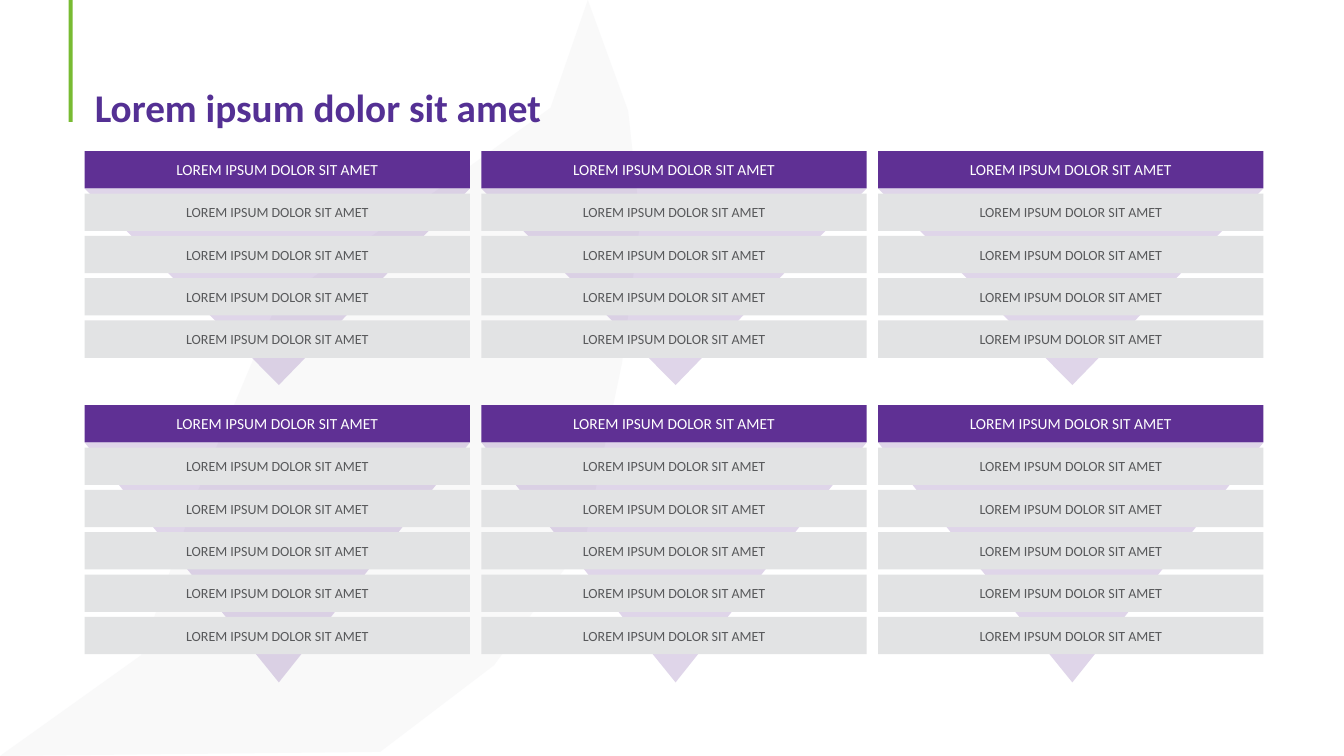
import pptx
import pptx.dml.color
import pptx.enum.shapes
import pptx.enum.text
import pptx.oxml.ns
import pptx.util
from lxml import etree

Inches = pptx.util.Inches
SHAPES = pptx.enum.shapes.MSO_SHAPE
ALIGN = pptx.enum.text.PP_ALIGN
ANCHOR = pptx.enum.text.MSO_ANCHOR

COLORS = {
    "white": "FFFFFF",
    "green": "78BB32",
    "title": "543094",
    "purple": "5F3094",
    "row": "E2E3E4",
    "text": "58595B",
    "backdrop": "E1E2E4",
}
LABEL = "LOREM IPSUM DOLOR SIT AMET"
COLUMN_LEFT = 0.84
COLUMN_PITCH = (8.71 - COLUMN_LEFT) / 2
COLUMN_WIDTH = 3.82
ROW_PITCH = 0.42
ROW_HEIGHT = 0.37
BANDS = [
    {"top": 1.5, "row_count": 4, "arrow_height": 1.95},
    {"top": 4.02, "row_count": 5, "arrow_height": 2.38},
]
BACKDROP_POINTS = [
    (0, 7.5), (1.4, 6.5), (1.95, 4.9), (2.75, 3), (4.3, 1.91), (5.46, 1.07), (5.83, 0),
    (6.23, 1.1), (6.35, 2.2), (6.17, 3.6), (5.8, 5.37), (4.9, 6.6), (3.77, 7.46),
]


def rgb(name):
    return pptx.dml.color.RGBColor.from_string(COLORS[name])


def write_text(shape, text, size, color, bold=False, align=ALIGN.CENTER,
               anchor=ANCHOR.MIDDLE, line_spacing=1.0):
    frame = shape.text_frame
    frame.word_wrap = True
    frame.auto_size = pptx.enum.text.MSO_AUTO_SIZE.NONE
    frame.vertical_anchor = anchor
    paragraph = frame.paragraphs[0]
    paragraph.alignment = align
    paragraph.line_spacing = line_spacing
    run = paragraph.add_run()
    run.text = text
    run.font.name = "Calibri"
    run.font.size = pptx.util.Pt(size)
    run.font.bold = bold
    run.font.color.rgb = rgb(color)


class SlideBuilder:
    def __init__(self, slide):
        self.slide = slide

    def paint(self, shape, color, opacity=None):
        shape.shadow.inherit = False
        shape.line.fill.background()
        shape.fill.solid()
        shape.fill.fore_color.rgb = rgb(color)
        if opacity is not None:
            qualified = pptx.oxml.ns.qn
            color_element = shape.element.spPr.find(".//" + qualified("a:srgbClr"))
            alpha = etree.SubElement(color_element, qualified("a:alpha"))
            alpha.set("val", str(opacity * 1000))

    def preset(self, kind, left, top, width, height, color, opacity=None):
        shape = self.slide.shapes.add_shape(
            kind, Inches(left), Inches(top), Inches(width), Inches(height))
        self.paint(shape, color, opacity)
        return shape

    def backdrop(self):
        points = [(Inches(x), Inches(y)) for x, y in BACKDROP_POINTS]
        builder = self.slide.shapes.build_freeform(*points[0])
        builder.add_line_segments(points[1:])
        self.paint(builder.convert_to_shape(), "backdrop", 20)

    def title(self, text):
        title = self.slide.shapes.title
        title.left, title.top = Inches(0.84), Inches(0.41)
        title.width, title.height = Inches(11.98), Inches(0.94)
        write_text(title, text, size=28, color="title", bold=True,
                   align=ALIGN.LEFT, anchor=ANCHOR.BOTTOM, line_spacing=0.9)
        title.element.getparent().append(title.element)

    def arrow(self, left, top, height):
        arrow = self.preset(SHAPES.ISOSCELES_TRIANGLE, left, top,
                            COLUMN_WIDTH, height, "purple", 20)
        arrow.adjustments[0] = 0.496
        arrow.rotation = 180

    def bar(self, left, top, fill, size, color):
        bar = self.preset(SHAPES.RECTANGLE, left, top, COLUMN_WIDTH, ROW_HEIGHT, fill)
        write_text(bar, LABEL, size=size, color=color)

    def stack(self, left, top, row_count, arrow_height):
        self.arrow(left, top + ROW_HEIGHT, arrow_height)
        self.bar(left, top, "purple", 11, "white")
        for row in range(1, row_count + 1):
            self.bar(left, top + row * ROW_PITCH, "row", 10, "text")


def main():
    presentation = pptx.Presentation()
    presentation.slide_width = Inches(13.33)
    presentation.slide_height = Inches(7.5)
    slide = presentation.slides.add_slide(presentation.slide_layouts[5])
    builder = SlideBuilder(slide)
    builder.preset(SHAPES.RECTANGLE, 0.68, 0, 0.04, 1.21, "green")
    builder.backdrop()
    builder.title("Lorem ipsum dolor sit amet")
    for column in range(3):
        for band in BANDS:
            builder.stack(COLUMN_LEFT + column * COLUMN_PITCH, **band)
    presentation.save("out.pptx")


if __name__ == "__main__":
    main()
